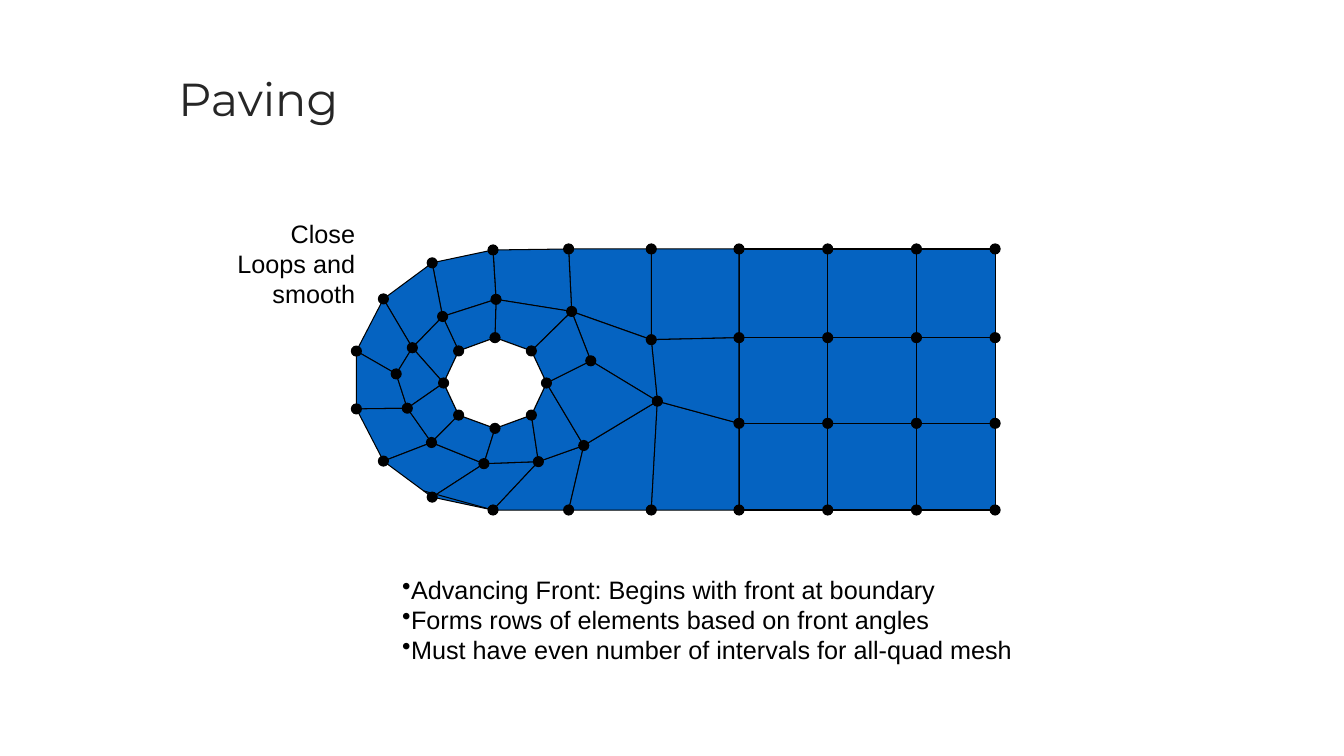
from math import cos, radians, sin
from typing import NamedTuple

from lxml.etree import SubElement
from pptx import Presentation
from pptx.dml.color import RGBColor
from pptx.enum.shapes import MSO_CONNECTOR as Connector, MSO_SHAPE as Shape
from pptx.enum.text import MSO_ANCHOR as Anchor, MSO_AUTO_SIZE as AutoSize, PP_ALIGN as Align
from pptx.oxml.ns import qn
from pptx.util import Cm, Pt

BLUE, BLACK, WHITE, INK = "0563C1", "000000", "FFFFFF", "262626"
CM_PER_UNIT = 2.54  # the mesh is plotted on a 13.33 by 7.5 grid
DOT_SIZE = 0.1
LINE_WIDTH = Pt(0.75)


class Node(NamedTuple):
    x: float
    y: float


class Ellipse(NamedTuple):
    centre: Node
    x_radius: float
    y_radius: float

    def node(self, degrees: float) -> Node:
        """Node at an angle, counted anticlockwise from the right."""
        angle = radians(degrees)
        return Node(self.centre.x + self.x_radius * cos(angle),
                    self.centre.y - self.y_radius * sin(angle))


class Note(NamedTuple):
    place: tuple[float, float, float, float]
    lines: list[str]
    align: Align
    wrap: bool
    bullet: str = ""


Cell = list[Node]

# Outline of the part: straight rows on the right, a rounded end, a round hole
COLUMNS = [5.64, 6.46, 7.33, 8.21, 9.09, 9.87]
TOP, UPPER, LOWER, BOTTOM = 2.47, 3.35, 4.2, 5.06
ROUND_END = Ellipse(Node(4.89, 3.77), 1.39, 1.29)
HOLE = Ellipse(Node(4.91, 3.8), 0.51, 0.45)
END_INTERVALS, HOLE_INTERVALS = 7, 8

# Nodes that smoothing has moved off the regular rows
SMOOTHED_UPPER = [Node(6.46, 3.37), Node(5.67, 3.09)]
SMOOTHED_RING = [Node(4.92, 2.97), Node(4.39, 3.14), Node(4.09, 3.45), Node(3.93, 3.71),
                 Node(4.04, 4.05), Node(4.28, 4.39), Node(4.8, 4.6), Node(5.34, 4.58)]
SMOOTHED_LOWER = [Node(5.79, 4.42), Node(6.52, 3.98)]
CLOSING_NODE = Node(5.86, 3.58)  # where the two fronts meet beside the hole
LOOSE_END = Node(4.2, 4.87)      # tip of the edge that overshoots the outline


def row(y: float, columns: list[float]) -> list[Node]:
    return [Node(x, y) for x in columns]


def boundary_nodes() -> list[Node]:
    """From the top right corner, round the left end, to the bottom right corner."""
    arc = [ROUND_END.node(90 + 180 * step / END_INTERVALS)
           for step in range(END_INTERVALS + 1)]
    return row(TOP, COLUMNS[::-1]) + arc + row(BOTTOM, COLUMNS)


def front_nodes() -> list[Node]:
    """The front one row further in, with one node for each boundary node."""
    regular = COLUMNS[len(SMOOTHED_UPPER):]
    return (row(UPPER, regular[::-1]) + SMOOTHED_UPPER + SMOOTHED_RING
            + SMOOTHED_LOWER + row(LOWER, regular))


def rim_nodes() -> list[Node]:
    """Round the hole from its right side; the first node closes the loop."""
    return [HOLE.node(360 * step / HOLE_INTERVALS) for step in range(HOLE_INTERVALS + 1)]


def strip(outer: list[Node], inner: list[Node]) -> list[Cell]:
    """One quad for each interval between two facing chains of nodes."""
    sides = list(zip(outer, inner))
    return [[a, b, d, c] for (a, c), (b, d) in zip(sides, sides[1:])]


def mesh_cells(boundary: list[Node], front: list[Node], rim: list[Node]) -> list[Cell]:
    # The fronts run face to face until they part at the hole
    straight = len(COLUMNS) - 1
    upper, lower = front[:straight], front[::-1][:straight]
    hole_top, hole_bottom = front[straight], front[-1 - straight]
    right, upper_right = rim[:2]

    # The left side of the hole is one interval longer on the front than on the rim
    left = HOLE_INTERVALS // 2
    over = front[straight:straight + left]
    under = front[straight + left + 1:len(front) - straight]
    left_cell = [rim[left], *front[straight + left - 1:straight + left + 2]]

    closing_cells = [
        [hole_top, upper[-1], lower[-1], CLOSING_NODE],
        [CLOSING_NODE, lower[-1], hole_bottom, right],
        [upper_right, hole_top, CLOSING_NODE, right],
    ]
    return (strip(boundary, front) + strip(upper, lower)
            + strip(over, rim[1:left + 1]) + [left_cell] + strip(under, rim[left:])
            + closing_cells)


def length(units: float) -> Cm:
    return Cm(units * CM_PER_UNIT)


def colour(code: str) -> RGBColor:
    return RGBColor.from_string(code)


def paint(shape, fill: str) -> None:
    shape.shadow.inherit = False
    shape.fill.solid()
    shape.fill.fore_color.rgb = colour(fill)
    shape.line.color.rgb = colour(BLACK)
    shape.line.width = LINE_WIDTH


def draw_polygon(page, nodes: list[Node], fill: str) -> None:
    start, *rest = [(length(node.x), length(node.y)) for node in nodes]
    builder = page.shapes.build_freeform(*start)
    builder.add_line_segments(rest, close=True)
    paint(builder.convert_to_shape(), fill)


def draw_edge(page, start: Node, end: Node) -> None:
    connector = page.shapes.add_connector(Connector.STRAIGHT, *map(length, start + end))
    connector.line.color.rgb = colour(BLACK)
    connector.line.width = LINE_WIDTH
    SubElement(connector._element.spPr, qn("a:effectLst"))


def draw_dot(page, node: Node) -> None:
    left, top, size = map(length, (node.x - DOT_SIZE / 2, node.y - DOT_SIZE / 2, DOT_SIZE))
    paint(page.shapes.add_shape(Shape.OVAL, left, top, size, size), BLACK)


def draw_mesh(page) -> None:
    boundary, front, rim = boundary_nodes(), front_nodes(), rim_nodes()
    for cell in mesh_cells(boundary, front, rim):
        draw_polygon(page, cell, BLUE)
    draw_polygon(page, rim[:-1], WHITE)
    draw_edge(page, LOOSE_END, ROUND_END.node(270))
    for node in boundary + front + rim[:-1] + [CLOSING_NODE]:
        draw_dot(page, node)


def write(box, lines: list[str], span_format: dict, ink: str,
          paragraph_format: dict, bullet: str = "") -> None:
    frame = box.text_frame
    frame.vertical_anchor = Anchor.MIDDLE
    frame.text = "\n".join(lines)
    for para in frame.paragraphs:
        if bullet:
            properties = para._p.get_or_add_pPr()
            properties.set("marL", "0")
            properties.set("indent", "0")
            SubElement(properties, qn("a:buChar")).set("char", bullet)
        for name, value in paragraph_format.items():
            setattr(para, name, value)
        for span in para.runs:
            for name, value in span_format.items():
                setattr(span.font, name, value)
            span.font.color.rgb = colour(ink)


def add_note(page, note: Note) -> None:
    box = page.shapes.add_textbox(*map(length, note.place))
    for name, value in {"word_wrap": note.wrap, "auto_size": AutoSize.SHAPE_TO_FIT_TEXT}.items():
        setattr(box.text_frame, name, value)
    write(box, note.lines, {"size": Pt(18), "name": "Arial"}, BLACK,
          {"alignment": note.align}, note.bullet)


NOTES = [
    Note((3.89, 5.64, 6.31, 1.01), [
        "Advancing Front: Begins with front at boundary",
        "Forms rows of elements based on front angles",
        "Must have even number of intervals for all-quad mesh",
    ], Align.LEFT, wrap=False, bullet="•"),
    Note((2.13, 2.11, 1.49, 1.01), ["Close Loops and smooth"], Align.RIGHT, wrap=True),
]


def main() -> None:
    deck = Presentation()
    deck.slide_width, deck.slide_height = length(13.33), length(7.5)
    page = deck.slides.add_slide(deck.slide_layouts[5])
    title = page.shapes.title
    title.left, title.top, title.width, title.height = map(length, (1.67, 0.63, 9.22, 0.75))
    write(title, ["Paving"], {"size": Pt(33), "name": "Montserrat"}, INK,
          {"alignment": Align.LEFT, "line_spacing": 0.9})
    draw_mesh(page)
    for note in NOTES:
        add_note(page, note)
    deck.save("out.pptx")


if __name__ == "__main__":
    main()
